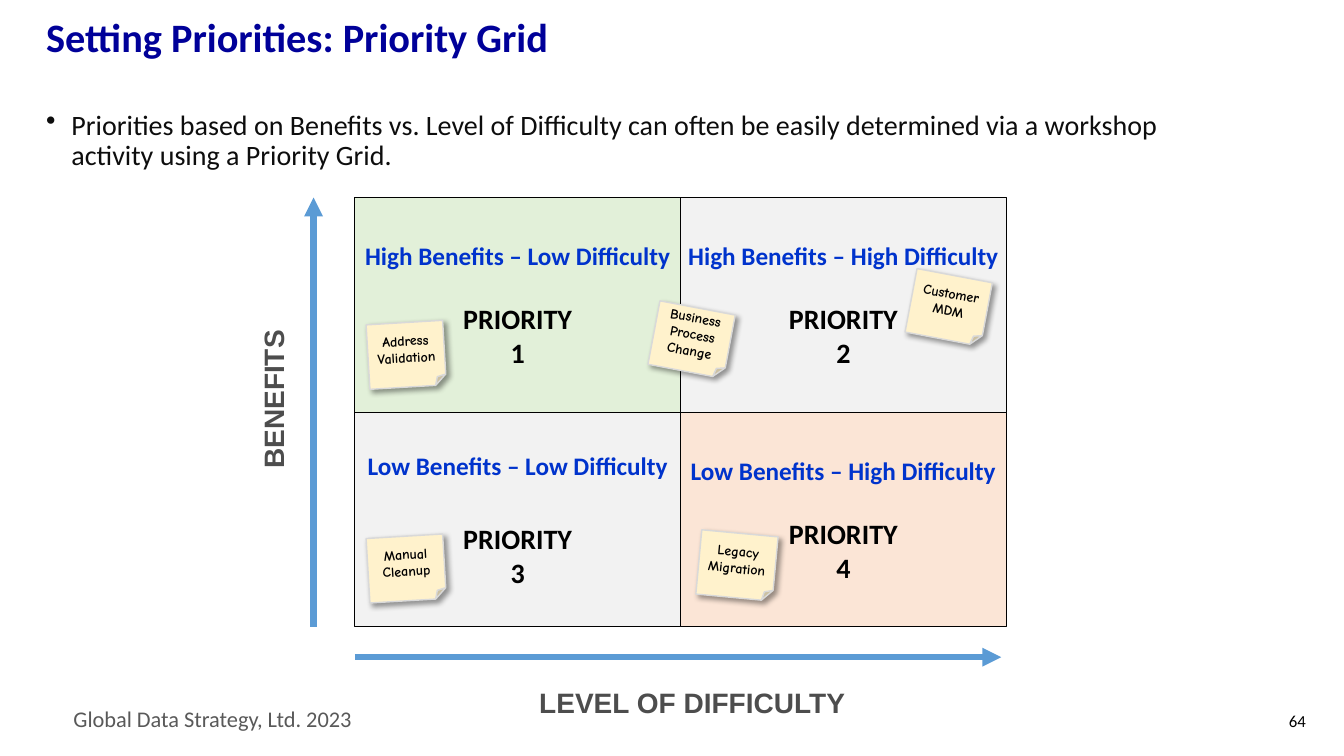
from lxml import etree
from pptx import Presentation
from pptx.dml.color import RGBColor
from pptx.enum import shapes, text
from pptx.oxml import ns
from pptx.util import Inches, Pt

COLORS = {
    "title": "000099", "heading": "0033CC", "black": "000000", "body": "0D0D0D",
    "axis": "4D4D4D", "footer": "595959", "arrow": "5B9BD5",
    "green": "E2F0D9", "gray": "F2F2F2", "orange": "FBE5D6",
    "note": "FFF2CC", "note_edge": "D9D9D9",
}

TITLE = "Setting Priorities: Priority Grid"
BULLET = ("Priorities based on Benefits vs. Level of Difficulty can often be easily "
          "determined via a workshop activity using a Priority Grid.")
FOOTER = "Global Data Strategy, Ltd. 2023"
PAGE_NUMBER = "64"

QUADRANTS = [
    ("High Benefits – Low Difficulty", "green", 22),
    ("High Benefits – High Difficulty", "gray", 22),
    ("Low Benefits – Low Difficulty", "gray", 29.3),
    ("Low Benefits – High Difficulty", "orange", 22),
]
NOTES = [
    ("Address Validation", 3.65, 3.2, -3.4),
    ("Customer MDM", 9.03, 2.73, 10.7),
    ("Manual Cleanup", 3.65, 5.32, -3.4),
    ("Legacy Migration", 6.93, 5.29, 5.3),
    ("Business Process Change", 6.48, 3.05, 10.7),
]

GRID_LEFT, GRID_TOP = 3.52, 1.96
CELL_WIDTH, CELL_HEIGHT = 3.23, 2.13
GRID_BOTTOM = GRID_TOP + 2 * CELL_HEIGHT
NOTE_WIDTH, NOTE_HEIGHT = 0.76, 0.64
ARROWS = [
    (3.11, GRID_BOTTOM, 3.11, GRID_TOP),
    (GRID_LEFT, 6.52, 9.93, 6.52),
]


def rgb(name):
    return RGBColor.from_string(COLORS[name])


def add_xml(parent, tag, **attributes):
    return etree.SubElement(parent, ns.qn(tag), attributes)


def style(paragraph, size, color, bold=False, font="Calibri", align=text.PP_ALIGN.LEFT):
    paragraph.alignment = align
    paragraph.font.size = Pt(size)
    paragraph.font.name = font
    paragraph.font.bold = bold
    paragraph.font.color.rgb = rgb(color)


def add_label(slide, wording, box, size, color, anchor=text.MSO_ANCHOR.TOP, **options):
    label = slide.shapes.add_textbox(*map(Inches, box))
    label.text_frame.word_wrap = True
    label.text_frame.vertical_anchor = anchor
    paragraph = label.text_frame.paragraphs[0]
    paragraph.text = wording
    style(paragraph, size, color, **options)
    return label


def add_filled_shape(slide, kind, box, fill, edge, edge_width):
    shape = slide.shapes.add_shape(kind, *map(Inches, box))
    shape.shadow.inherit = False
    shape.fill.solid()
    shape.fill.fore_color.rgb = rgb(fill)
    shape.line.color.rgb = rgb(edge)
    shape.line.width = Pt(edge_width)
    shape.text_frame.vertical_anchor = text.MSO_ANCHOR.MIDDLE
    return shape


def add_quadrant(slide, index, heading, fill, gap):
    row, column = divmod(index, 2)
    box = (GRID_LEFT + column * CELL_WIDTH, GRID_TOP + row * CELL_HEIGHT,
           CELL_WIDTH, CELL_HEIGHT)
    shape = add_filled_shape(slide, shapes.MSO_SHAPE.RECTANGLE, box, fill, "black", 0.75)
    frame = shape.text_frame
    frame.word_wrap = False
    frame.text = f"{heading}\nPRIORITY\n{index + 1}"
    looks = [(18, "heading"), (20, "black"), (20, "black")]
    for paragraph, (size, color) in zip(frame.paragraphs, looks):
        style(paragraph, size, color, bold=True, align=text.PP_ALIGN.CENTER)
    frame.paragraphs[1].space_before = Pt(gap)


def add_note(slide, wording, left, top, angle):
    box = (left, top, NOTE_WIDTH, NOTE_HEIGHT)
    note = add_filled_shape(slide, shapes.MSO_SHAPE.FOLDED_CORNER, box,
                            "note", "note_edge", 1)
    note.rotation = angle
    effects = note._element.spPr.find(ns.qn("a:effectLst"))
    shadow = add_xml(effects, "a:outerShdw", blurRad=str(Pt(4)), dist=str(Pt(3)),
                     dir="2700000", algn="tl", rotWithShape="0")
    color = add_xml(shadow, "a:srgbClr", val=COLORS["black"])
    add_xml(color, "a:alpha", val="40000")
    frame = note.text_frame
    frame.word_wrap = True
    frame.margin_left = frame.margin_right = frame.margin_top = Inches(0.05)
    frame.margin_bottom = Inches(0.06)
    frame.text = wording
    style(frame.paragraphs[0], 10, "black", bold=True, font="Comic Neue",
          align=text.PP_ALIGN.CENTER)


def add_arrow(slide, ends):
    arrow = slide.shapes.add_connector(shapes.MSO_CONNECTOR.STRAIGHT, *map(Inches, ends))
    arrow.line.color.rgb = rgb("arrow")
    arrow.line.width = Pt(4.5)
    add_xml(arrow.line._get_or_add_ln(), "a:tailEnd", type="triangle")
    add_xml(arrow._element.spPr, "a:effectLst")


def add_bullet(slide):
    label = add_label(slide, BULLET, (0.36, 1.05, 11.68, 0.59), 20, "body")
    paragraph = label.text_frame.paragraphs[0]
    paragraph.line_spacing = 0.9
    properties = paragraph._p.get_or_add_pPr()
    properties.set("marL", str(Inches(0.25)))
    properties.set("indent", str(Inches(-0.25)))
    bullet = etree.Element(ns.qn("a:buChar"), char="•")
    properties.find(ns.qn("a:defRPr")).addprevious(bullet)


def main():
    presentation = Presentation()
    presentation.slide_width = Inches(13.33)
    presentation.slide_height = Inches(7.5)
    slide = presentation.slides.add_slide(presentation.slide_layouts[6])

    add_label(slide, FOOTER, (0.63, 6.95, 3.62, 0.37), 16, "footer")
    title = add_label(slide, TITLE, (0.36, 0.12, 11.12, 0.54), 28.8, "title",
                      anchor=text.MSO_ANCHOR.BOTTOM, bold=True)
    title.text_frame.paragraphs[0].line_spacing = 0.9
    for index, quadrant in enumerate(QUADRANTS):
        add_quadrant(slide, index, *quadrant)
    add_label(slide, "LEVEL OF DIFFICULTY", (5.25, 6.75, 3.33, 0.43), 20, "axis",
              bold=True, font="Arial")
    benefits = add_label(slide, "BENEFITS", (1.7, 3.53, 2.01, 0.43), 20, "axis",
                         bold=True, font="Arial")
    benefits.rotation = 270
    add_label(slide, PAGE_NUMBER, (12.42, 6.95, 0.63, 0.4), 12, "black",
              anchor=text.MSO_ANCHOR.MIDDLE, align=text.PP_ALIGN.RIGHT)
    for ends in ARROWS:
        add_arrow(slide, ends)
    for note in NOTES:
        add_note(slide, *note)
    add_bullet(slide)
    presentation.save("out.pptx")


if __name__ == "__main__":
    main()
